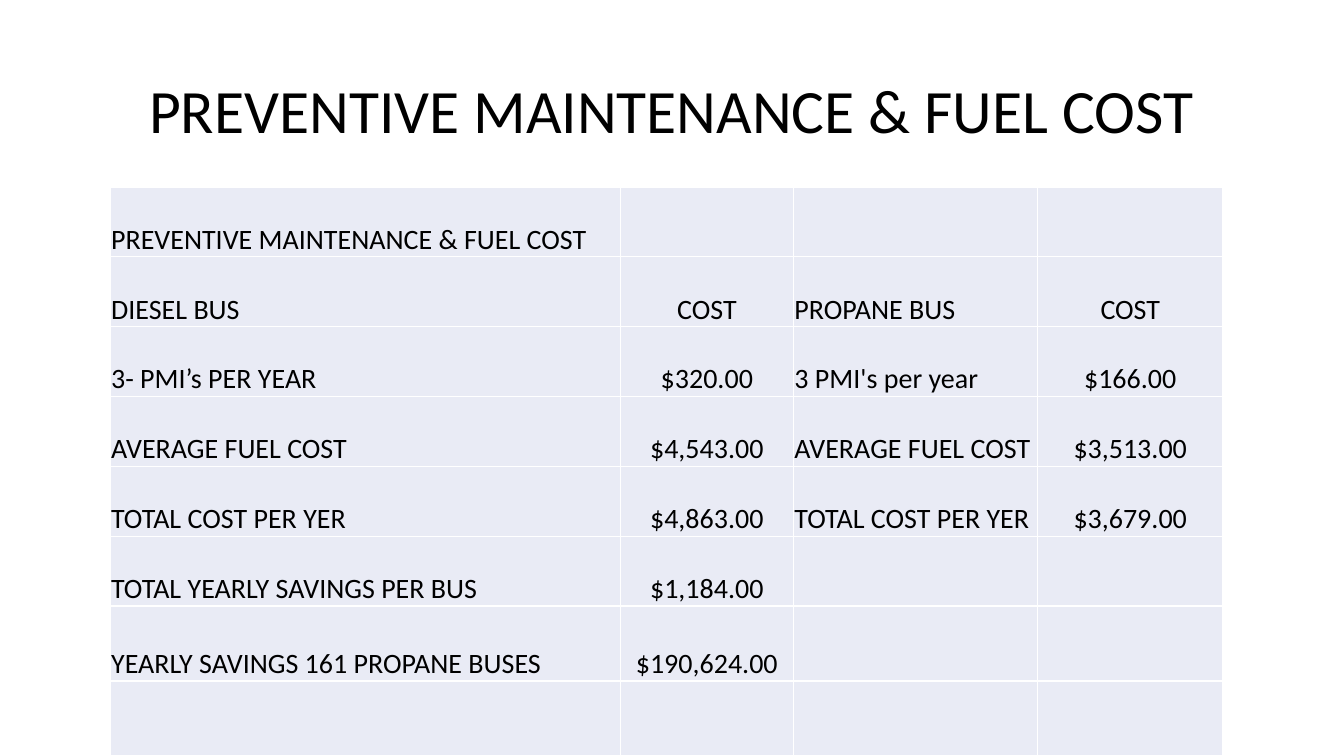
from lxml import etree
from pptx import Presentation
from pptx.dml.color import RGBColor
from pptx.enum.text import MSO_ANCHOR, PP_ALIGN
from pptx.oxml.ns import qn
from pptx.util import Cm, Pt

LEFT, CENTER = PP_ALIGN.LEFT, PP_ALIGN.CENTER
MIDDLE, BOTTOM = MSO_ANCHOR.MIDDLE, MSO_ANCHOR.BOTTOM

FONT = "Calibri"
COLORS = {"text": "000000", "cell": "E9EBF5", "border": "FFFFFF"}
TITLE = "PREVENTIVE MAINTENANCE & FUEL COST"
COLS = [12.85, 4.37, 6.15, 4.67]
ROWS = [1.76] * 6 + [1.89] * 2
COSTS = [
    [TITLE, "", "", ""],
    ["DIESEL BUS", "COST", "PROPANE BUS", "COST"],
    ["3- PMI’s PER YEAR", "$320.00", "3 PMI's per year", "$166.00"],
    ["AVERAGE FUEL COST", "$4,543.00", "AVERAGE FUEL COST", "$3,513.00"],
    ["TOTAL COST PER YER", "$4,863.00", "TOTAL COST PER YER", "$3,679.00"],
    ["TOTAL YEARLY SAVINGS PER BUS", "$1,184.00", "", ""],
    ["YEARLY SAVINGS 161 PROPANE BUSES", "$190,624.00", "", ""],
    ["", "", "", ""],
]


def color(name):
    return RGBColor.from_string(COLORS[name])


def put_text(frame, text, size=20, align=LEFT, spacing=None):
    para = frame.paragraphs[0]
    para.alignment = align
    para.line_spacing = spacing
    run = para.add_run()
    run.text = text
    run.font.name = FONT
    run.font.size = Pt(size)
    run.font.color.rgb = color("text")


def add_title(slide):
    box = slide.shapes.add_textbox(Cm(2.33), Cm(1.01), Cm(29.21), Cm(3.68))
    frame = box.text_frame
    frame.word_wrap = True
    frame.vertical_anchor = MIDDLE
    put_text(frame, TITLE, size=44, align=CENTER, spacing=0.9)


def set_border(cell):
    """Draw thin lines on all four sides; they must precede the cell's fill."""
    props = cell._tc.get_or_add_tcPr()
    for side in ("lnL", "lnR", "lnT", "lnB"):
        line = etree.SubElement(props, qn(f"a:{side}"), w=str(Pt(1)))
        fill = etree.SubElement(line, qn("a:solidFill"))
        etree.SubElement(fill, qn("a:srgbClr"), val=COLORS["border"])


def fill_cell(cell, text, align):
    set_border(cell)
    cell.fill.solid()
    cell.fill.fore_color.rgb = color("cell")
    if text:
        cell.vertical_anchor = BOTTOM
        cell.margin_left = cell.margin_right = cell.margin_top = Cm(0.02)
        cell.margin_bottom = 0
        put_text(cell.text_frame, text, align=align)


def add_costs(slide):
    frame = slide.shapes.add_table(
        len(ROWS), len(COLS), Cm(2.78), Cm(4.71), Cm(sum(COLS)), Cm(sum(ROWS))
    )
    table = frame.table
    table.first_row = table.horz_banding = False
    for col, width in zip(table.columns, COLS):
        col.width = Cm(width)
    for row, height, texts in zip(table.rows, ROWS, COSTS):
        row.height = Cm(height)
        for i, (cell, text) in enumerate(zip(row.cells, texts)):
            fill_cell(cell, text, CENTER if i % 2 else LEFT)


def main():
    deck = Presentation()
    deck.slide_width, deck.slide_height = Cm(33.87), Cm(19.05)
    slide = deck.slides.add_slide(deck.slide_layouts[6])
    add_title(slide)
    add_costs(slide)
    deck.save("out.pptx")


if __name__ == "__main__":
    main()
